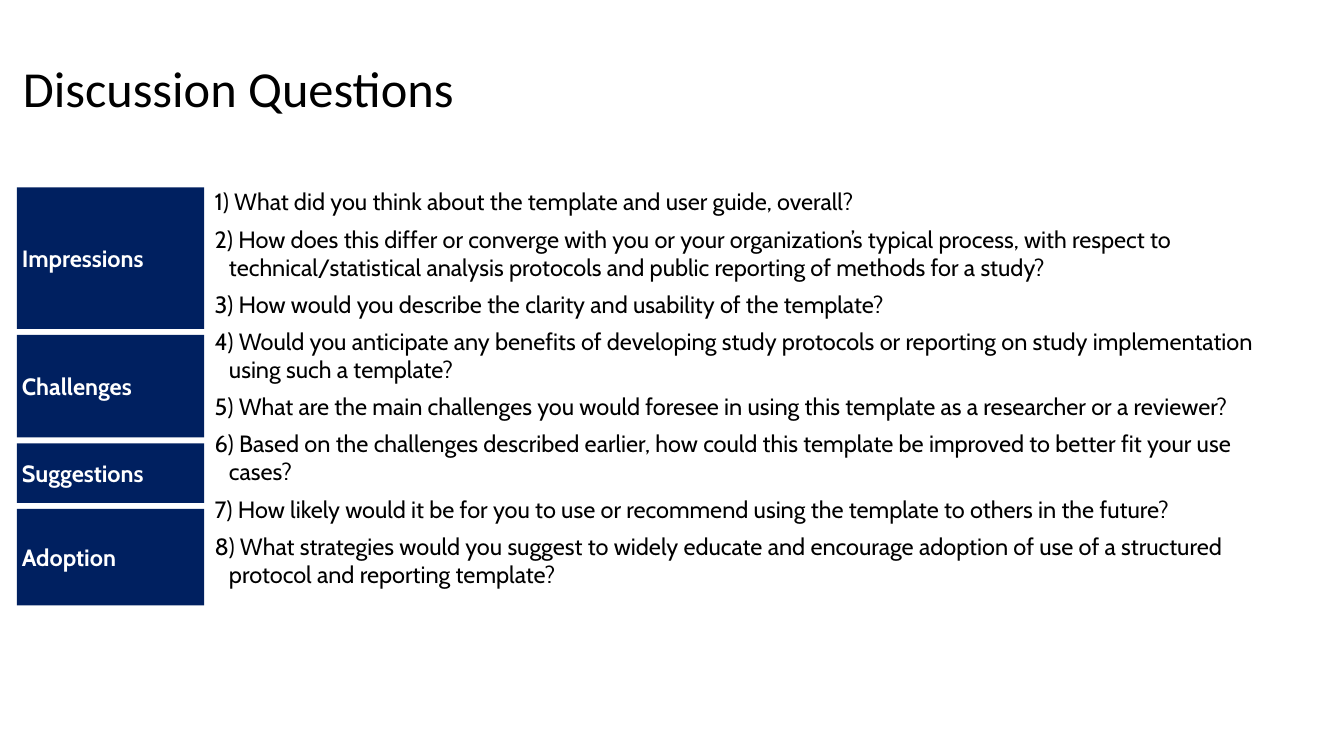
from pptx import Presentation
from pptx.dml.color import RGBColor
from pptx.enum.shapes import MSO_SHAPE
from pptx.enum.text import MSO_ANCHOR, MSO_AUTO_SIZE, PP_ALIGN
from pptx.util import Pt

NAVY = RGBColor(0x00, 0x20, 0x60)
WHITE = RGBColor(0xFF, 0xFF, 0xFF)
BLACK = RGBColor(0x00, 0x00, 0x00)

TOPICS = [("Impressions", 168.5), ("Challenges", 122), ("Suggestions", 71), ("Adoption", 115)]
QUESTIONS = [
    "What did you think about the template and user guide, overall?",
    "How does this differ or converge with you or your organization’s typical process, "
    "with respect to technical/statistical analysis protocols and public reporting of methods for a study?",
    "How would you describe the clarity and usability of the template?",
    "Would you anticipate any benefits of developing study protocols or reporting on "
    "study implementation using such a template?",
    "What are the main challenges you would foresee in using this template as a researcher or a reviewer?",
    "Based on the challenges described earlier, how could this template be improved to "
    "better fit your use cases?",
    "How likely would it be for you to use or recommend using the template to others in the future?",
    "What strategies would you suggest to widely educate and encourage adoption of use "
    "of a structured protocol and reporting template?",
]
LEFT, TOP, GAP = 20, 223.2, 7


def set_font(p, name, size, color, bold=False):
    p.font.name = name
    p.font.size = Pt(size)
    p.font.color.rgb = color
    p.font.bold = bold


def set_margins(tf, margin):
    tf.margin_left = tf.margin_top = tf.margin_right = tf.margin_bottom = Pt(margin)


prs = Presentation()
prs.slide_width, prs.slide_height = Pt(1600), Pt(900)
s = prs.slides.add_slide(prs.slide_layouts[6])

tf = s.shapes.add_textbox(Pt(LEFT), Pt(64), Pt(533), Pt(80)).text_frame
tf.word_wrap = False
tf.auto_size = MSO_AUTO_SIZE.SHAPE_TO_FIT_TEXT
p = tf.paragraphs[0]
p.text = "Discussion Questions"
set_font(p, "Calibri", 60, BLACK)

y = TOP
for topic, height in TOPICS:
    sp = s.shapes.add_shape(MSO_SHAPE.RECTANGLE, Pt(LEFT), Pt(y), Pt(223), Pt(height))
    sp.shadow.inherit = False
    sp.fill.solid()
    sp.fill.fore_color.rgb = NAVY
    sp.line.fill.background()
    tf = sp.text_frame
    tf.word_wrap = True
    tf.vertical_anchor = MSO_ANCHOR.MIDDLE
    set_margins(tf, 6)
    p = tf.paragraphs[0]
    p.text = topic
    p.alignment = PP_ALIGN.LEFT
    set_font(p, "Cabin", 28, WHITE, True)
    y += height + GAP

tf = s.shapes.add_textbox(Pt(255.6), Pt(TOP), Pt(1247), Pt(549)).text_frame
tf.word_wrap = True
set_margins(tf, 0)
for number, question in enumerate(QUESTIONS, 1):
    p = tf.paragraphs[0] if number == 1 else tf.add_paragraph()
    p.text = f"{number}) {question}"
    p.space_before = Pt(10.5)
    set_font(p, "Cabin", 28, BLACK)
    pPr = p._p.get_or_add_pPr()
    pPr.set("marL", str(Pt(17)))
    pPr.set("indent", str(Pt(-17)))

prs.save("out.pptx")
